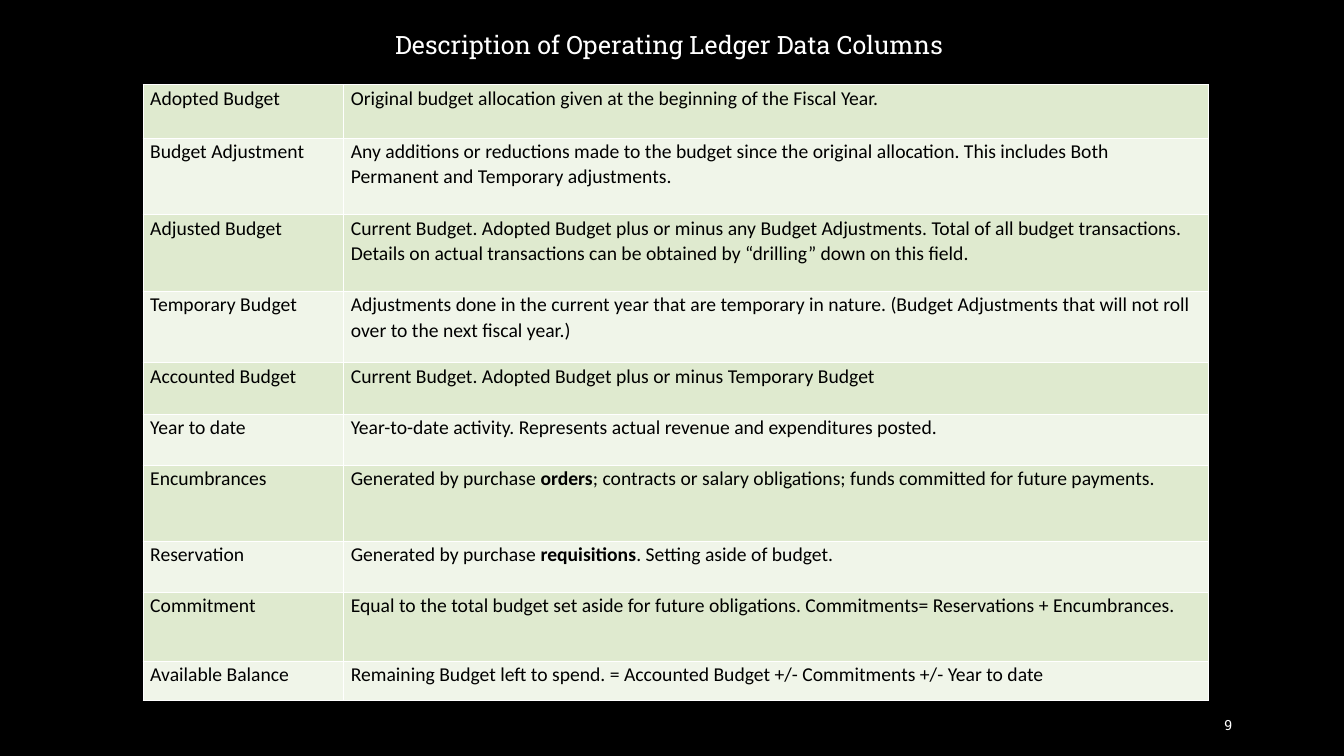
from lxml import etree
from pptx import Presentation
from pptx import util as u
from pptx.dml import color
from pptx.enum import text
from pptx.oxml import ns

WHITE, BLACK = "FFFFFF", "000000"
BANDS = ["DFEACF", "F0F5E9"]
HEADING_FONT, TABLE_FONT = "Roboto Slab", "Calibri"

COLUMN_WIDTHS = [1.99, 8.58]
# Row height, ledger column, description split into runs (every second run is bold)
LEDGER_COLUMNS = [
    (0.53, "Adopted Budget",
     ["Original budget allocation given at the beginning of the Fiscal Year."]),
    (0.76, "Budget Adjustment",
     ["Any additions or reductions made to the budget since the original allocation. "
      "This includes Both Permanent and Temporary adjustments."]),
    (0.76, "Adjusted Budget",
     ["Current Budget. Adopted Budget plus or minus any Budget Adjustments. "
      "Total of all budget transactions. Details on actual transactions can be "
      "obtained by “drilling” down on this field."]),
    (0.71, "Temporary Budget",
     ["Adjustments done in the current year that are temporary in nature. "
      "(Budget Adjustments that will not roll over to the next fiscal year.)"]),
    (0.51, "Accounted Budget",
     ["Current Budget. Adopted Budget plus or minus Temporary Budget"]),
    (0.51, "Year to date",
     ["Year-to-date activity. Represents actual revenue and expenditures posted."]),
    (0.75, "Encumbrances",
     ["Generated by purchase ", "orders",
      "; contracts or salary obligations; funds committed for future payments."]),
    (0.51, "Reservation",
     ["Generated by purchase ", "requisitions", ". Setting aside of budget."]),
    (0.68, "Commitment",
     ["Equal to the total budget set aside for future obligations. "
      "Commitments= Reservations + Encumbrances."]),
    (0.39, "Available Balance",
     ["Remaining Budget left to spend. = Accounted Budget +/- Commitments +/- Year to date"]),
]


def rgb(hex_value):
    return color.RGBColor.from_string(hex_value)


def format_font(font, name, size, hex_value, bold=False):
    font.name = name
    font.size = u.Pt(size)
    font.color.rgb = rgb(hex_value)
    font.bold = bold


def add_borders(cell, hex_value, points):
    properties = cell._tc.get_or_add_tcPr()
    for side in ("a:lnL", "a:lnR", "a:lnT", "a:lnB"):
        line = etree.SubElement(properties, ns.qn(side), w=str(u.Pt(points)))
        fill = etree.SubElement(line, ns.qn("a:solidFill"))
        etree.SubElement(fill, ns.qn("a:srgbClr"), val=hex_value)


def fill_cell(cell, parts, band):
    add_borders(cell, WHITE, 1)
    cell.fill.solid()
    cell.fill.fore_color.rgb = rgb(band)
    cell.margin_left = cell.margin_right = u.Inches(0.07)
    cell.margin_top = cell.margin_bottom = 0
    paragraph = cell.text_frame.paragraphs[0]
    paragraph.line_spacing = 1.07
    for index, part in enumerate(parts):
        run = paragraph.add_run()
        run.text = part
        format_font(run.font, TABLE_FONT, 14, BLACK, bold=index % 2 == 1)


def add_title(slide, left, top, width, height):
    title = slide.shapes.title
    title.left, title.top = u.Inches(left), u.Inches(top)
    title.width, title.height = u.Inches(width), u.Inches(height)
    frame = title.text_frame
    frame.text = "Description of Operating Ledger Data Columns"
    frame.word_wrap = True
    frame.auto_size = text.MSO_AUTO_SIZE.SHAPE_TO_FIT_TEXT
    frame.vertical_anchor = text.MSO_ANCHOR.TOP
    paragraph = frame.paragraphs[0]
    paragraph.alignment = text.PP_ALIGN.LEFT
    format_font(paragraph.runs[0].font, HEADING_FONT, 18, WHITE)


def add_ledger_table(slide, left, top):
    height = sum(row[0] for row in LEDGER_COLUMNS)
    frame = slide.shapes.add_table(
        len(LEDGER_COLUMNS), len(COLUMN_WIDTHS), u.Inches(left), u.Inches(top),
        u.Inches(sum(COLUMN_WIDTHS)), u.Inches(height))
    table = frame.table
    table.first_row = table.horz_banding = False
    for column, width in zip(table.columns, COLUMN_WIDTHS):
        column.width = u.Inches(width)
    for index, (row_height, name, description) in enumerate(LEDGER_COLUMNS):
        band = BANDS[index % 2]
        table.rows[index].height = u.Inches(row_height)
        fill_cell(table.cell(index, 0), [name], band)
        fill_cell(table.cell(index, 1), description, band)


def add_page_number(slide, left, top, width, height):
    box = slide.shapes.add_textbox(
        u.Inches(left), u.Inches(top), u.Inches(width), u.Inches(height))
    frame = box.text_frame
    frame.text = "9"
    frame.word_wrap = True
    frame.vertical_anchor = text.MSO_ANCHOR.MIDDLE
    paragraph = frame.paragraphs[0]
    paragraph.alignment = text.PP_ALIGN.RIGHT
    format_font(paragraph.runs[0].font, HEADING_FONT, 10, WHITE)


def main():
    presentation = Presentation()
    presentation.slide_width = u.Inches(13.33)
    presentation.slide_height = u.Inches(7.5)
    slide = presentation.slides.add_slide(presentation.slide_layouts[5])
    slide.background.fill.solid()
    slide.background.fill.fore_color.rgb = rgb(BLACK)

    add_title(slide, 3.82, 0.24, 5.76, 0.42)
    add_ledger_table(slide, 1.42, 0.84)
    add_page_number(slide, 11.5, 6.99, 0.82, 0.4)
    presentation.save("out.pptx")


if __name__ == "__main__":
    main()
